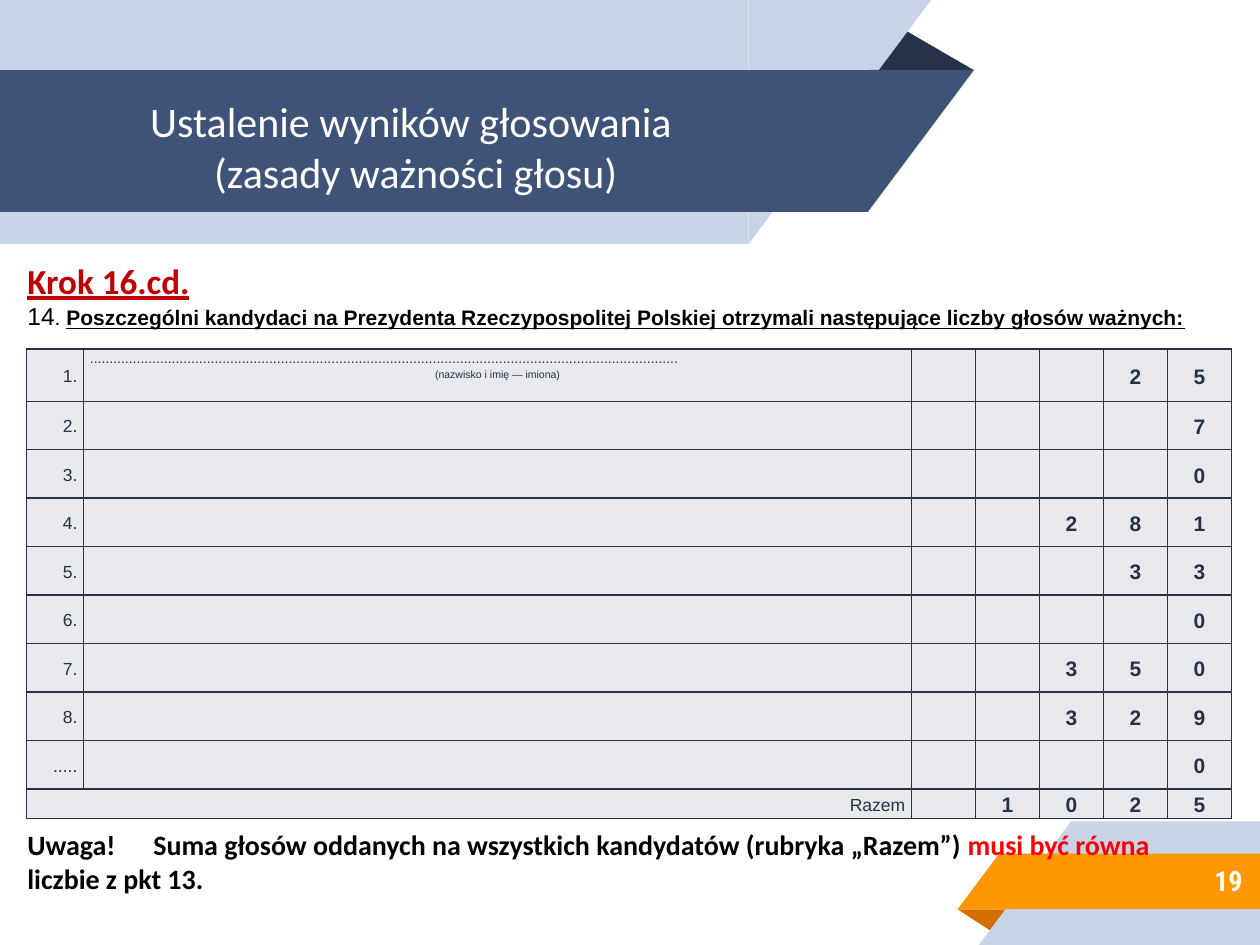
from lxml import etree
from pptx import Presentation
from pptx.dml.color import RGBColor
from pptx.enum.shapes import MSO_SHAPE
from pptx.enum.text import MSO_ANCHOR, MSO_AUTO_SIZE, PP_ALIGN
from pptx.oxml.ns import qn
from pptx.util import Pt

RECT, WEDGE, PEAK = MSO_SHAPE.RECTANGLE, MSO_SHAPE.RIGHT_TRIANGLE, MSO_SHAPE.ISOSCELES_TRIANGLE
TOP, MIDDLE = MSO_ANCHOR.TOP, MSO_ANCHOR.MIDDLE
LEFT, CENTER, RIGHT = PP_ALIGN.LEFT, PP_ALIGN.CENTER, PP_ALIGN.RIGHT
FIXED = MSO_AUTO_SIZE.NONE

WHITE = RGBColor(0xFF, 0xFF, 0xFF)
BLACK = RGBColor(0, 0, 0)
PALE = RGBColor(0xC7, 0xD3, 0xE6)
BLUE = RGBColor(0x3F, 0x53, 0x78)
NAVY = RGBColor(0x26, 0x32, 0x48)
ORANGE = RGBColor(0xFF, 0x98, 0x00)
RUST = RGBColor(0xD2, 0x6F, 0x00)
GRAY = RGBColor(0xE8, 0xE9, 0xEC)
CRIMSON = RGBColor(0xC0, 0x00, 0x00)
RED = RGBColor(0xFF, 0x00, 0x00)

VOTES = ["25", "7", "0", "281", "33", "0", "350", "329", "0", "1025"]
MARKS = [f"{n}." for n in range(1, 9)] + ["....."]
WIDTHS = [32.6, 473] + [36.6] * 5
HEIGHTS = [30] + [27.7] * 8 + [17]


def write(para, text, font="Arial", size=12, color=BLACK, bold=False, under=False, align=LEFT):
    """Add one formatted run to a paragraph."""
    para.alignment = align
    run = para.add_run()
    run.text = text
    run.font.name, run.font.size = font, Pt(size)
    run.font.bold, run.font.underline = bold, under
    run.font.color.rgb = color


def draw(slide, kind, box, color, turn=0, flip=False):
    """Add a plain filled shape, turned or mirrored if asked."""
    shape = slide.shapes.add_shape(kind, *map(Pt, box))
    shape.shadow.inherit = False
    shape.fill.solid()
    shape.fill.fore_color.rgb = color
    shape.line.fill.background()
    shape.rotation = turn
    if flip:
        shape.element.spPr.xfrm.set("flipH", "1")
    if kind == PEAK:
        shape.adjustments[0] = 0.32


def place(shape, box, anchor=TOP):
    """Set the position and the text frame of a shape."""
    shape.left, shape.top, shape.width, shape.height = map(Pt, box)
    frame = shape.text_frame
    frame.word_wrap, frame.auto_size = True, FIXED
    frame.vertical_anchor = anchor
    return frame


def ribbon(slide, left, top, split, right, height, color, head):
    """Draw a band with one slanted end, at the head or foot of the slide."""
    turn = 180 if head else 0
    first, last = (RECT, WEDGE) if head else (WEDGE, RECT)
    draw(slide, first, (left, top, split - left, height), color, turn, True)
    draw(slide, last, (split, top, right - split, height), color, turn, True)


def border(cell):
    """Give a cell a thin navy line on each side."""
    props = cell._tc.get_or_add_tcPr()
    for spot, side in enumerate(("a:lnL", "a:lnR", "a:lnT", "a:lnB")):
        line = etree.Element(qn(side), w=str(Pt(1)))
        fill = etree.SubElement(line, qn("a:solidFill"))
        etree.SubElement(fill, qn("a:srgbClr"), val=str(NAVY))
        props.insert(spot, line)


def style(cell):
    """Set fill, margins, lines and base text size of a cell."""
    cell.fill.solid()
    cell.fill.fore_color.rgb = GRAY
    cell.vertical_anchor = MIDDLE
    cell.margin_left = cell.margin_right = Pt(3.6)
    cell.margin_top = cell.margin_bottom = 0
    border(cell)
    para = cell.text_frame.paragraphs[0]
    para.line_spacing = 1.15
    return para


def add_votes(slide):
    """Build the table of votes, one digit to a cell."""
    shape = slide.shapes.add_table(len(HEIGHTS), len(WIDTHS), Pt(15.2), Pt(199.3),
                                   Pt(sum(WIDTHS)), Pt(sum(HEIGHTS)))
    table = shape.table
    table.first_row = table.horz_banding = False
    for col, width in zip(table.columns, WIDTHS):
        col.width = Pt(width)
    for row, height in zip(table.rows, HEIGHTS):
        row.height = Pt(height)
    for row, mark, vote in zip(table.rows, MARKS + ["Razem"], VOTES):
        texts = [mark, ""] + list(vote.rjust(5))
        for spot, (cell, text) in enumerate(zip(row.cells, texts)):
            para = style(cell)
            if not text.strip():
                etree.SubElement(para._p, qn("a:endParaRPr"), sz="1200")
            elif spot:
                write(para, text, color=NAVY, bold=True, align=CENTER)
            else:
                write(para, text, size=10, color=NAVY, align=RIGHT)
    table.cell(9, 0).merge(table.cell(9, 1))
    name = table.cell(0, 1)
    name.vertical_anchor = TOP
    write(name.text_frame.paragraphs[0], "." * 151, size=8, color=NAVY)
    hint = name.text_frame.add_paragraph()
    hint.line_spacing = 1.15
    write(hint, "(nazwisko i imię — imiona)", size=6, color=NAVY, align=CENTER)


def add_body(slide):
    """Write the step above the table and the remark below it."""
    frame = place(slide.shapes.add_textbox(0, 0, 0, 0), (8.6, 144.7, 702.7, 388))
    write(frame.paragraphs[0], "Krok 16.cd.", "Calibri", 20, CRIMSON, True, True)
    item = frame.add_paragraph()
    write(item, "14", size=14)
    write(item, ". ")
    write(item, "Poszczególni kandydaci na Prezydenta Rzeczypospolitej Polskiej "
          "otrzymali następujące liczby głosów ważnych:", bold=True, under=True)
    note = frame.add_paragraph()
    note.space_before = Pt(284)
    for text, color in (
        ("Uwaga!\tSuma głosów oddanych na wszystkich kandydatów (rubryka „Razem”) ", BLACK),
        ("musi być równa ", RED),
        ("\tliczbie z pkt 13.", BLACK),
    ):
        write(note, text, "Calibri", 16, color, True)


def add_title(slide):
    """Format the title and bring it in front of the bands."""
    title = slide.shapes.title
    slide.shapes._spTree.append(title.element)
    frame = place(title, (-81.4, 51.1, 638, 65.5))
    write(frame.paragraphs[0], "Ustalenie wyników głosowania ", "Calibri", 24, WHITE, align=CENTER)
    write(frame.add_paragraph(), "(zasady ważności głosu)", "Calibri", 24, WHITE, align=CENTER)


def main():
    """Build the slide and save it."""
    deck = Presentation()
    deck.slide_width, deck.slide_height = Pt(720), Pt(540)
    slide = deck.slides.add_slide(deck.slide_layouts[5])
    draw(slide, PEAK, (547.2, 519.6, 31, 13.7), RUST, 180)
    ribbon(slide, 559.4, 469.4, 612, 720, 70.6, PALE, False)
    ribbon(slide, 547.2, 487.8, 571, 720, 31.8, ORANGE, False)
    draw(slide, PEAK, (495.4, 16, 61.2, 24.2), NAVY)
    ribbon(slide, 0, 0, 427.7, 532, 139.5, PALE, True)
    ribbon(slide, 0, 40, 496, 556.6, 81, BLUE, True)
    add_body(slide)
    add_title(slide)
    page = place(slide.shapes.add_textbox(0, 0, 0, 0), (599.8, 486.7, 117.4, 33), MIDDLE)
    write(page.paragraphs[0], "19", "Roboto Condensed", 16, WHITE, True, align=RIGHT)
    add_votes(slide)
    deck.save("out.pptx")


if __name__ == "__main__":
    main()
